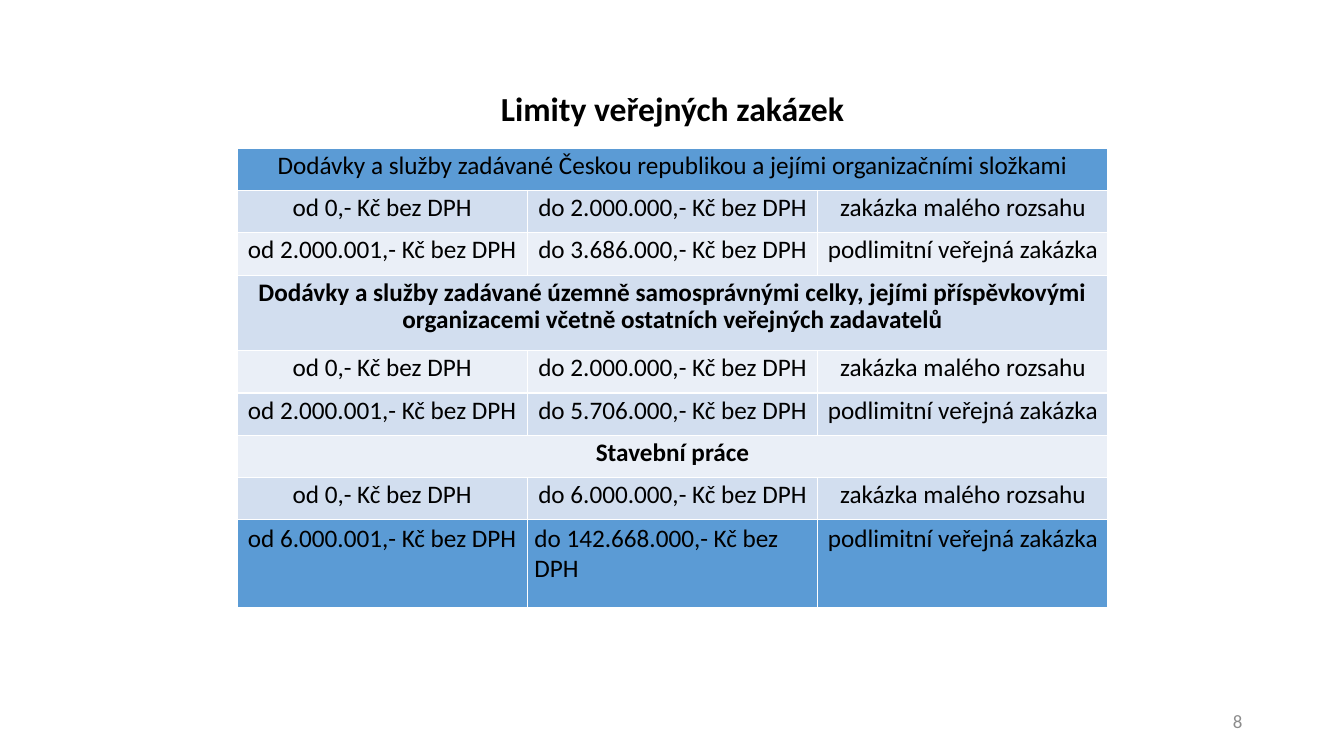
from pptx import Presentation
from pptx import util as u
from pptx.dml.color import RGBColor
from pptx.enum import text as t

BLUE, PALE, LIGHT = "5B9BD5", "D2DEEF", "EAEFF7"
LEFT, COL, ROW = 2.35, 2.88, 0.42
MID = t.PP_ALIGN.CENTER


def write(frame, words, size=18, color="000000", bold=False, align=MID,
          line=0.9, before=0, after=0):
    frame.word_wrap = True
    par = frame.paragraphs[0]
    par.alignment, par.line_spacing = align, line
    par.space_before, par.space_after = u.Pt(before), u.Pt(after)
    run = par.add_run()
    run.text = words
    font = run.font
    font.name, font.size, font.bold = "Calibri", u.Pt(size), bold
    font.color.rgb = RGBColor.from_string(color)


def grid(top, rows, heights):
    """Add a three-column table; a row with one text spans all columns."""
    box = [u.Inches(n) for n in (LEFT, top, 3 * COL, sum(heights))]
    table = slide.shapes.add_table(len(rows), 3, *box).table
    for r, (fill, texts, form) in enumerate(rows):
        table.rows[r].height = u.Inches(heights[r])
        if len(texts) == 1:
            table.cell(r, 0).merge(table.cell(r, 2))
        for c in range(3):
            cell = table.cell(r, c)
            cell.fill.solid()
            cell.fill.fore_color.rgb = RGBColor.from_string(fill)
            cell.margin_left = cell.margin_right = u.Inches(0.07)
            cell.margin_top = cell.margin_bottom = u.Inches(0.04)
            if c < len(texts):
                write(cell.text_frame, texts[c], **form)
    return table


deck = Presentation()
deck.slide_width, deck.slide_height = u.Inches(13.33), u.Inches(7.5)
slide = deck.slides.add_slide(deck.slide_layouts[5])

title = slide.shapes.title
title.left, title.top = u.Inches(LEFT), u.Inches(0.36)
title.width, title.height = u.Inches(3 * COL), u.Inches(1.48)
title.text_frame.vertical_anchor = t.MSO_ANCHOR.MIDDLE
write(title.text_frame, "Limity veřejných zakázek", size=24, bold=True)

plain = dict(before=6, after=3)
strong = dict(plain, bold=True)
small, under = "zakázka malého rozsahu", "podlimitní veřejná zakázka"
zero, two = "od 0,- Kč bez DPH", "od 2.000.001,- Kč bez DPH"
limits = [
    (["Dodávky a služby zadávané Českou republikou a jejími organizačními složkami"], plain),
    ([zero, "do 2.000.000,- Kč bez DPH", small], plain),
    ([two, "do 3.686.000,- Kč bez DPH", under], plain),
    (["Dodávky a služby zadávané územně samosprávnými celky, jejími příspěvkovými "
      "organizacemi včetně ostatních veřejných zadavatelů"], strong),
    ([zero, "do 2.000.000,- Kč bez DPH", small], plain),
    ([two, "do 5.706.000,- Kč bez DPH", under], plain),
    (["Stavební práce"], strong),
    ([zero, "do 6.000.000,- Kč bez DPH", small], plain),
]
fills = [BLUE] + [PALE, LIGHT] * 4
grid(1.47, [(fill, *row) for fill, row in zip(fills, limits)],
     [0.75 if r == 3 else ROW for r in range(len(limits))])

last = ["od 6.000.001,- Kč bez DPH", "do 142.668.000,- Kč bez DPH", under]
works = grid(5.15, [(BLUE, last, dict(line=1, before=3, after=3))], [0.88])
works.cell(0, 1).text_frame.paragraphs[0].alignment = t.PP_ALIGN.LEFT

page = slide.shapes.add_textbox(*[u.Inches(n) for n in (9.42, 6.95, 3, 0.4)])
page.text_frame.vertical_anchor = t.MSO_ANCHOR.MIDDLE
write(page.text_frame, "8", size=13.5, color="8C8C8C", align=t.PP_ALIGN.RIGHT, line=1)

deck.save("out.pptx")
